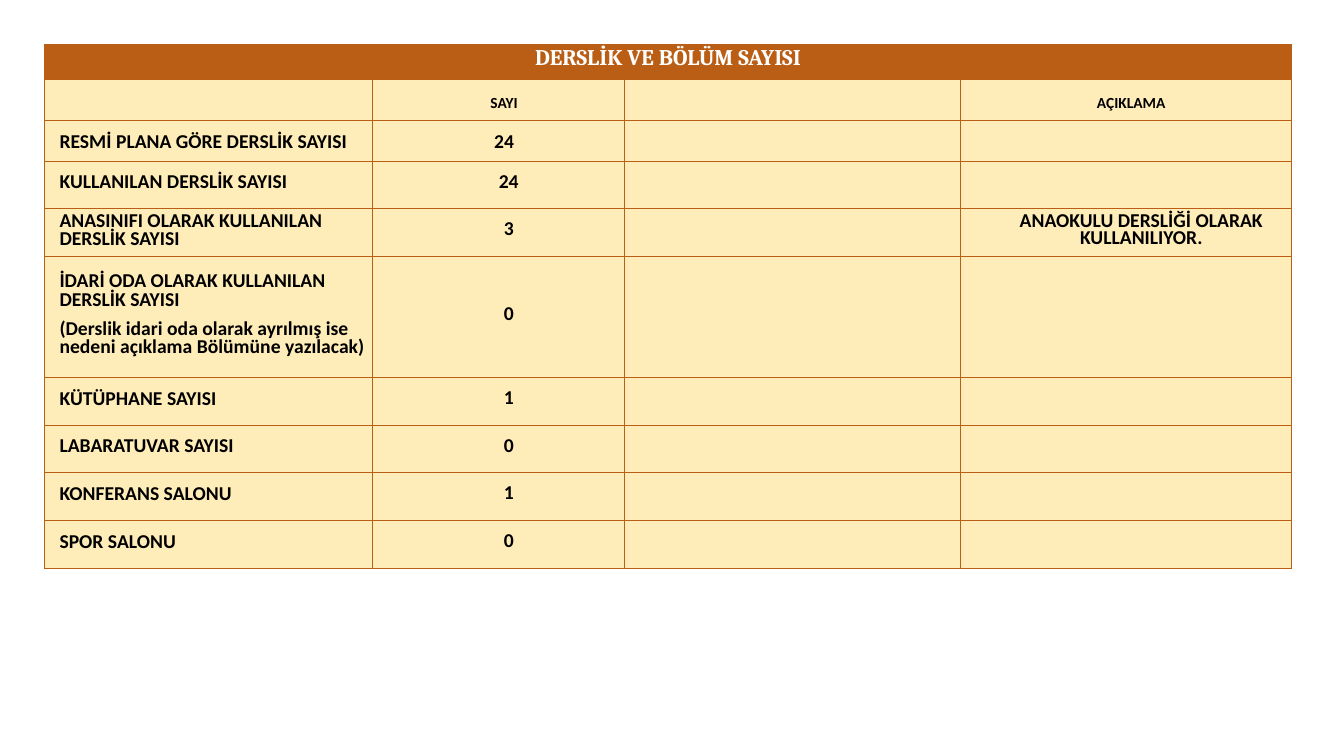
from lxml import etree
from pptx import Presentation
from pptx import util as u
from pptx.dml.color import RGBColor
from pptx.enum import text
from pptx.oxml import ns

# Content: label paragraphs, count, note
TITLE = "DERSLİK VE BÖLÜM SAYISI"
HEADS = ["", "SAYI", "", "AÇIKLAMA"]
ROOMS = [
    (["RESMİ PLANA GÖRE DERSLİK SAYISI"], "24", ""),
    (["KULLANILAN DERSLİK SAYISI"], "24", ""),
    (["ANASINIFI OLARAK KULLANILAN DERSLİK SAYISI"], "3",
     "ANAOKULU DERSLİĞİ OLARAK KULLANILIYOR."),
    (["İDARİ ODA OLARAK KULLANILAN DERSLİK SAYISI",
      "(Derslik idari oda olarak ayrılmış ise nedeni açıklama Bölümüne yazılacak)"],
     "0", ""),
    (["KÜTÜPHANE SAYISI"], "1", ""),
    (["LABARATUVAR SAYISI"], "0", ""),
    (["KONFERANS SALONU"], "1", ""),
    (["SPOR SALONU"], "0", ""),
]

# Layout in cm
LEFT, TOP = 1.12, 1.12
COLS = [8.27, 6.35, 8.45, 8.36]
ROWS = [0.88, 1.03, 1.03, 1.2, 1.2, 3.05] + [1.2] * 4

# Colours
RUST, CREAM, WHITE, BLACK = "B95E14", "FFEDB9", "FFFFFF", "000000"


def paint(fmt, hue):
    fmt.solid()
    fmt.fore_color.rgb = RGBColor.from_string(hue)


def dress(cell, hue):
    """Set the borders, then the fill and the margins of a cell."""
    props = cell._tc.get_or_add_tcPr()
    for side in ("lnL", "lnR", "lnT", "lnB"):
        line = etree.SubElement(props, ns.qn("a:" + side), w=str(u.Pt(0.5)))
        fill = etree.SubElement(line, ns.qn("a:solidFill"))
        etree.SubElement(fill, ns.qn("a:srgbClr"), val=hue if hue == RUST else RUST)
    paint(cell.fill, hue)
    cell.margin_left = cell.margin_right = u.Cm(0.18)
    cell.margin_top = cell.margin_bottom = 0
    cell.vertical_anchor = text.MSO_ANCHOR.MIDDLE


def write(cell, lines, size=14, pitch=13, indent=0, center=True,
          font="Calibri", hue=BLACK):
    frame = cell.text_frame
    for i, line in enumerate(lines):
        para = frame.add_paragraph() if i else frame.paragraphs[0]
        para.alignment = text.PP_ALIGN.CENTER if center else text.PP_ALIGN.LEFT
        para.line_spacing, para.space_after = u.Pt(pitch), u.Pt(8)
        para._p.get_or_add_pPr().set("marL", str(u.Cm(indent)))
        run = para.add_run()
        run.text = line
        run.font.name, run.font.size, run.font.bold = font, u.Pt(size), True
        paint(run.font.fill, hue)


# Slide and empty table
deck = Presentation()
deck.slide_width, deck.slide_height = u.Cm(33.87), u.Cm(19.05)
slide = deck.slides.add_slide(deck.slide_layouts[6])
grid = slide.shapes.add_table(
    len(ROWS), len(COLS), u.Cm(LEFT), u.Cm(TOP),
    u.Cm(sum(COLS)), u.Cm(sum(ROWS))).table
grid.first_row = grid.horz_banding = False
for col, wide in zip(grid.columns, COLS):
    col.width = u.Cm(wide)
for r, tall in enumerate(ROWS):
    grid.rows[r].height = u.Cm(tall)
    for c in range(len(COLS)):
        dress(grid.cell(r, c), CREAM if r else RUST)

# Title and column heads
grid.cell(0, 0).merge(grid.cell(0, len(COLS) - 1))
write(grid.cell(0, 0), [TITLE], 16, font="Cambria", hue=WHITE)
for c, head in enumerate(HEADS):
    if head:
        write(grid.cell(1, c), [head], 11, 19, 0.28)

# Room rows: the first one is set looser
for r, (label, count, note) in enumerate(ROOMS, 2):
    loose = r == 2
    write(grid.cell(r, 0), label, pitch=19 if loose else 13, indent=0.2, center=False)
    write(grid.cell(r, 1), [count], pitch=19 if loose else 12,
          indent=0.28 if loose else 0.51)
    if note:
        write(grid.cell(r, 3), [note], pitch=12, indent=0.79)

deck.save("out.pptx")
